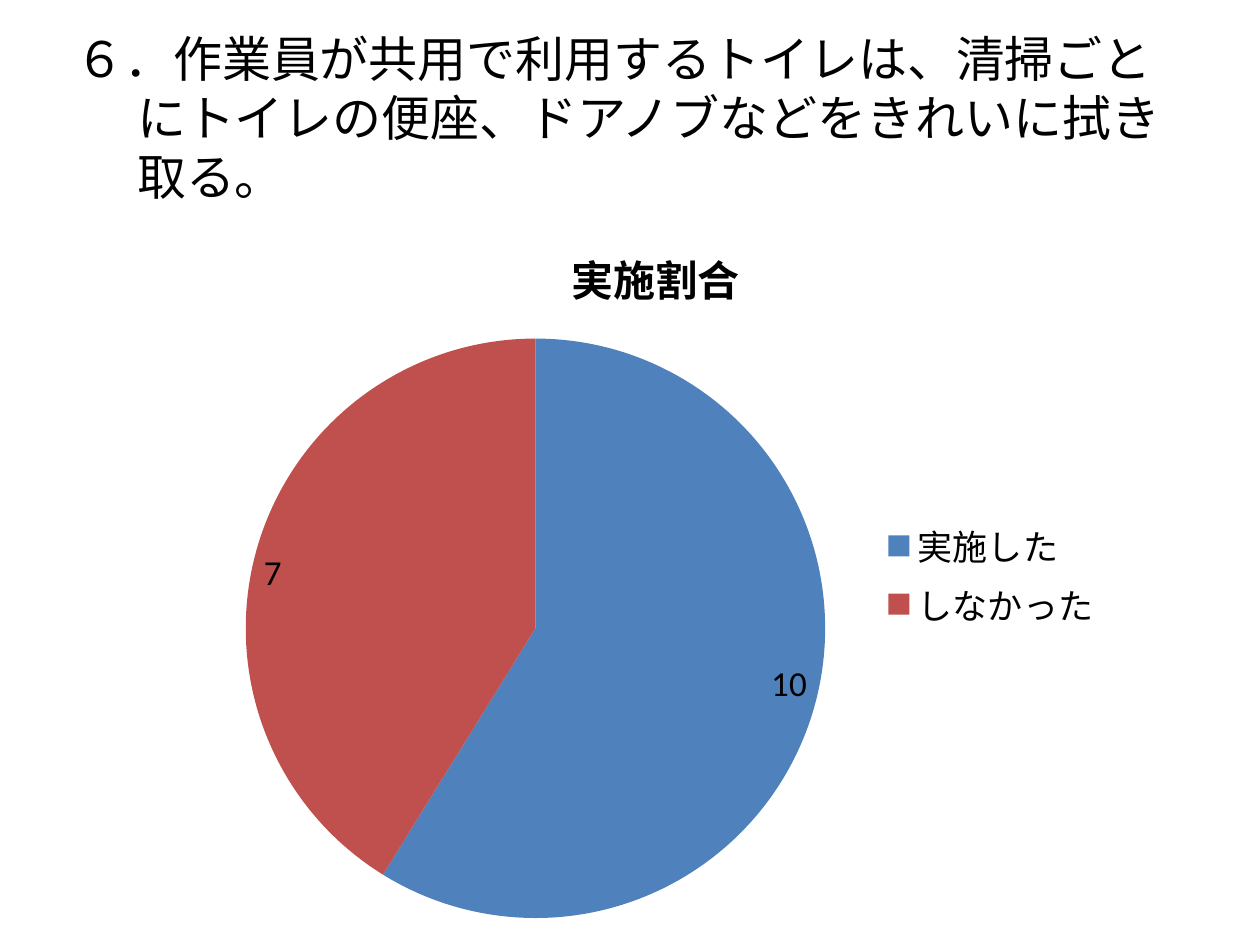
from dataclasses import dataclass

from pptx import Presentation
from pptx.chart.data import CategoryChartData
from pptx.dml.color import RGBColor
from pptx.enum.chart import XL_CHART_TYPE, XL_LABEL_POSITION, XL_LEGEND_POSITION
from pptx.enum.text import MSO_ANCHOR
from pptx.util import Inches, Pt

PIE = XL_CHART_TYPE.PIE
INSIDE_END = XL_LABEL_POSITION.INSIDE_END
RIGHT = XL_LEGEND_POSITION.RIGHT
MIDDLE = MSO_ANCHOR.MIDDLE
BLANK = 6


@dataclass(frozen=True)
class Theme:
    width: int = Inches(10)
    height: int = Inches(7.5)
    font: str = "Calibri"
    text: str = "000000"
    slices: tuple = ("4F81BD", "C0504D")
    heading: int = Pt(28)
    chart_title: int = Pt(24)
    chart_text: int = Pt(20)
    hanging: int = Inches(0.49)


THEME = Theme()


def set_attrs(target, values):
    for name, value in values.items():
        setattr(target, name, value)


def style_font(font, size, bold=False):
    set_attrs(font, {"name": THEME.font, "size": size, "bold": bold})
    font.color.rgb = RGBColor.from_string(THEME.text)


def box(left, top, width, height):
    return (
        int(left * THEME.width),
        int(top * THEME.height),
        int(width * THEME.width),
        int(height * THEME.height),
    )


def add_heading(s, text, area):
    tf = s.shapes.add_textbox(*area).text_frame
    set_attrs(tf, {"word_wrap": True, "vertical_anchor": MIDDLE})
    p = tf.paragraphs[0]
    pPr = p._p.get_or_add_pPr()
    pPr.set("marL", str(THEME.hanging))
    pPr.set("indent", str(-THEME.hanging))
    r = p.add_run()
    r.text = text
    style_font(r.font, THEME.heading)


def add_pie(s, title, counts, area):
    data = CategoryChartData()
    data.categories = list(counts)
    data.add_series(title, list(counts.values()))
    chart = s.shapes.add_chart(PIE, *area, data).chart
    style_font(chart.font, THEME.chart_text)

    set_attrs(chart, {"has_title": True, "has_legend": True})
    r = chart.chart_title.text_frame.paragraphs[0].add_run()
    r.text = title
    style_font(r.font, THEME.chart_title, bold=True)
    set_attrs(chart.legend, {"position": RIGHT, "include_in_layout": False})

    plot = chart.plots[0]
    set_attrs(plot, {"vary_by_categories": True, "has_data_labels": True})
    set_attrs(plot.data_labels, {"show_value": True, "position": INSIDE_END})
    for i, color in enumerate(THEME.slices):
        fill = plot.series[0].points[i].format.fill
        fill.solid()
        fill.fore_color.rgb = RGBColor.from_string(color)


def main():
    prs = Presentation()
    set_attrs(prs, {"slide_width": THEME.width, "slide_height": THEME.height})
    s = prs.slides.add_slide(prs.slide_layouts[BLANK])
    add_heading(
        s,
        "６．作業員が共用で利用するトイレは、清掃ごとにトイレの便座、ドアノブなどをきれいに拭き取る。",
        box(0.05, 0.04, 0.9, 1 / 6),
    )
    add_pie(
        s,
        "実施割合",
        {"実施した": 10, "しなかった": 7},
        box(0.154, 0.227, 0.732, 0.763),
    )
    prs.save("out.pptx")


if __name__ == "__main__":
    main()
